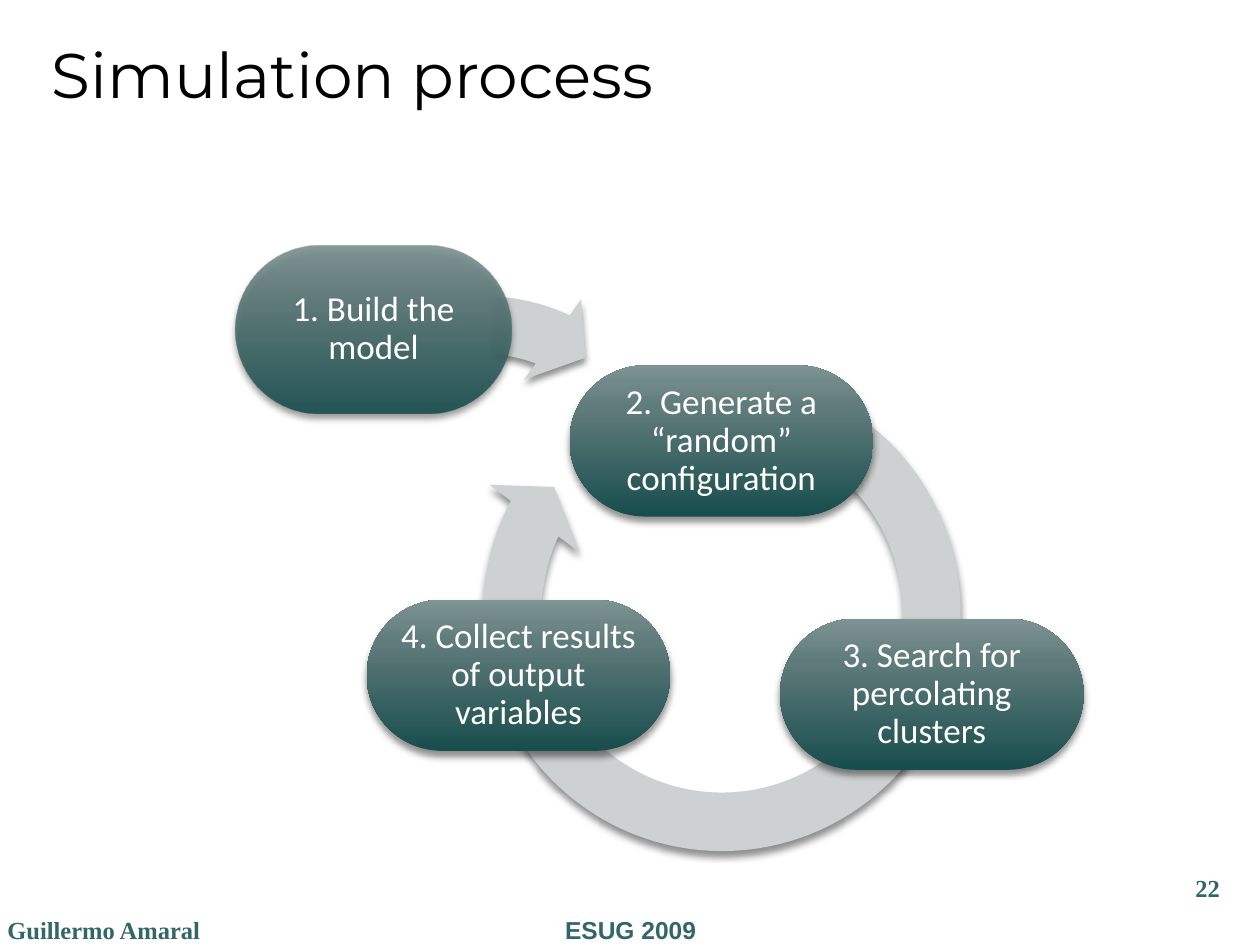
from dataclasses import dataclass

from lxml import etree
from pptx import Presentation
from pptx.dml.color import RGBColor
from pptx.enum.shapes import MSO_SHAPE as SHAPE
from pptx.enum.text import MSO_ANCHOR as ANCHOR, PP_ALIGN as ALIGN
from pptx.oxml import parse_xml
from pptx.oxml.ns import nsdecls, qn
from pptx.util import Inches, Pt


@dataclass(frozen=True)
class Theme:
    title_color: str = "000000"
    footer_color: str = "336666"
    arrow_color: str = "CDD1D1"
    step_color: str = "FFFFFF"
    shadow_color: str = "000000"
    step_stops: tuple = ((0, "184D4D"), (72, "607B7B"), (100, "7E9393"))
    title_size: int = 36
    step_size: int = 20
    footer_size: int = 14


theme = Theme()


def add_soft_shape(kind, left, top, width, height):
    """Add a preset shape without outline and with a soft shadow below it."""
    shape = slide.shapes.add_shape(
        kind, Inches(left), Inches(top), Inches(width), Inches(height))
    shape.line.fill.background()
    shape.shadow.inherit = False
    effects = shape._element.spPr.find(qn("a:effectLst"))
    shadow = etree.SubElement(effects, qn("a:outerShdw"), blurRad=str(Pt(4)),
                              dist=str(Pt(3)), dir="5400000", rotWithShape="0")
    color = etree.SubElement(shadow, qn("a:srgbClr"), val=theme.shadow_color)
    etree.SubElement(color, qn("a:alpha"), val="43000")
    return shape


def style_text(paragraph, font_name, size, color, align, bold=False):
    paragraph.alignment = align
    for run in paragraph.runs:
        run.font.name = font_name
        run.font.size = Pt(size)
        run.font.bold = bold
        run.font.color.rgb = RGBColor.from_string(color)


prs = Presentation()
prs.slide_width, prs.slide_height = Inches(10), Inches(7.5)
slide = prs.slides.add_slide(prs.slide_layouts[5])

title = slide.shapes.title
title.left, title.top = Inches(0.31), Inches(0.23)
title.width, title.height = Inches(9.69), Inches(1.41)
title.text_frame.text = "Simulation process"
title.text_frame.vertical_anchor = ANCHOR.TOP
style_text(title.text_frame.paragraphs[0], "Montserrat", theme.title_size,
           theme.title_color, ALIGN.LEFT)

# Footer: text, left, top, width, height, font, alignment
footers = [
    ("ESUG 2009", 3.42, 7.21, 3.17, 0.31, "Arial", ALIGN.CENTER),
    ("Guillermo Amaral", -0.04, 7.21, 3.17, 0.31, "Times New Roman", ALIGN.LEFT),
    ("22", 8.36, 6.88, 1.42, 0.39, "Times New Roman", ALIGN.RIGHT),
]
for text, left, top, width, height, font_name, align in footers:
    footer = slide.shapes.add_textbox(
        Inches(left), Inches(top), Inches(width), Inches(height))
    footer.text_frame.word_wrap = True
    footer.text_frame.text = text
    style_text(footer.text_frame.paragraphs[0], font_name, theme.footer_size,
               theme.footer_color, align, bold=True)

# Arrows: left, top, size, rotation, band %, head angle, end, start, head %
first_arrow = (2.03, 2.19, 3.6, 90, 12.7, 12.08, 203.26, 183.83, 10.8)
cycle_arrow = (3.62, 2.75, 4.22, 22.3, 11, 10.17, 184.28, 220.23, 10.6)

# Steps: text, left, top, width, height, opacity %, arrow drawn beneath
steps = [
    ("1. Build the model", 1.87, 1.95, 2.19, 1.33, 90, first_arrow),
    ("2. Generate a “random” configuration", 4.52, 2.9, 2.41, 1.2, 100, cycle_arrow),
    ("3. Search for percolating clusters", 6.19, 4.91, 2.41, 1.2, 100, None),
    ("4. Collect results of output variables", 2.91, 4.76, 2.41, 1.2, 100, None),
]
for text, left, top, width, height, opacity, arrow_data in steps:
    if arrow_data:
        x, y, size, rotation, band, head_angle, end, start, head = arrow_data
        arrow = add_soft_shape(SHAPE.CIRCULAR_ARROW, x, y, size, size)
        arrow.rotation = rotation
        arrow.fill.solid()
        arrow.fill.fore_color.rgb = RGBColor.from_string(theme.arrow_color)
        # Angles are stored in 1/60000 degree, adjustments in 1/100000
        adjustments = (band / 100, head_angle * 0.6, end * 0.6, start * 0.6, head / 100)
        for index, value in enumerate(adjustments):
            arrow.adjustments[index] = value

    step = add_soft_shape(SHAPE.ROUNDED_RECTANGLE, left, top, width, height)
    step.adjustments[0] = 0.5
    stops = "".join(
        f'<a:gs pos="{position * 1000}"><a:srgbClr val="{color}">'
        f'<a:alpha val="{opacity * 1000}"/></a:srgbClr></a:gs>'
        for position, color in theme.step_stops)
    step._element.spPr.find(qn("a:prstGeom")).addnext(parse_xml(
        f'<a:gradFill {nsdecls("a")} rotWithShape="1"><a:gsLst>{stops}</a:gsLst>'
        '<a:lin ang="16200000" scaled="0"/></a:gradFill>'))

    frame = step.text_frame
    frame.word_wrap = True
    frame.vertical_anchor = ANCHOR.MIDDLE
    frame.margin_left = frame.margin_right = frame.margin_top = frame.margin_bottom = 0
    frame.text = text
    frame.paragraphs[0].line_spacing = 0.9
    style_text(frame.paragraphs[0], "Calibri", theme.step_size,
               theme.step_color, ALIGN.CENTER)

prs.save("out.pptx")
